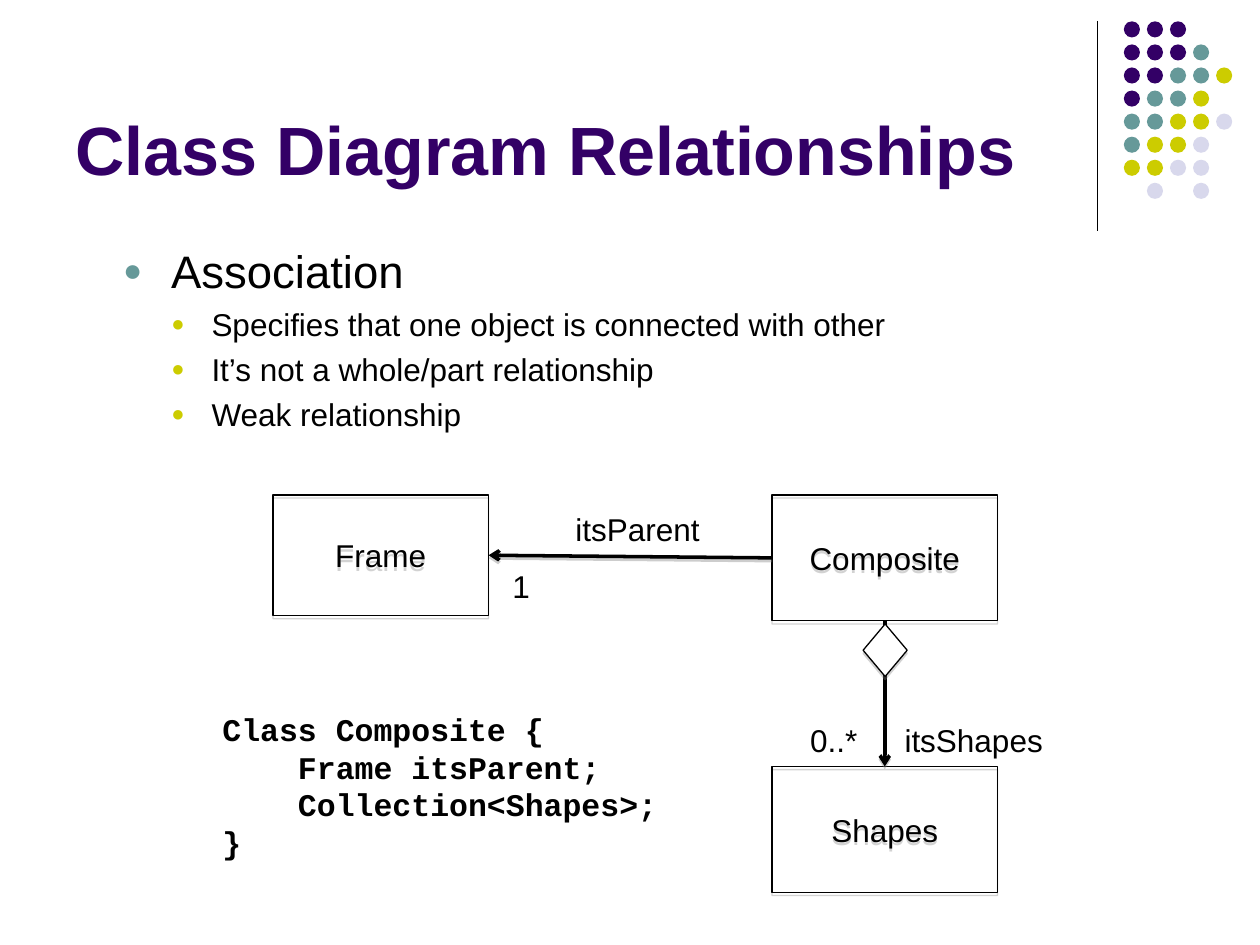
from typing import NamedTuple

from lxml.etree import SubElement
from pptx import Presentation
from pptx.dml.color import RGBColor
from pptx.enum.shapes import MSO_CONNECTOR, MSO_SHAPE
from pptx.enum.text import MSO_ANCHOR, PP_ALIGN
from pptx.oxml.ns import qn
from pptx.util import Pt

BLACK = RGBColor(0x00, 0x00, 0x00)
WHITE = RGBColor(0xFF, 0xFF, 0xFF)
GRAY = RGBColor(0x80, 0x80, 0x80)
PURPLE = RGBColor(0x33, 0x00, 0x66)
TEAL = RGBColor(0x66, 0x99, 0x99)
LIME = RGBColor(0xCC, 0xCC, 0x00)
LAVENDER = RGBColor(0xD8, 0xD8, 0xEC)

DOT_COLORS = {"P": PURPLE, "T": TEAL, "L": LIME, "V": LAVENDER}
DOT_ROWS = ("PPP", "PPPT", "PPTTL", "PTTL", "TTLLV", "TLLV", "LLVV", " V V")
DOT_LEFT, DOT_TOP, DOT_PITCH, DOT_SIZE = 642.2, 12.2, 13.18, 9.2


class Box(NamedTuple):
    left: float
    top: float
    width: float
    height: float

    def lengths(self) -> list:
        return [Pt(value) for value in self]


class ClassBox(NamedTuple):
    name: str
    box: Box


class Label(NamedTuple):
    text: str
    box: Box


class Bullet(NamedTuple):
    text: str
    level: int


class BulletStyle(NamedTuple):
    size: float
    margin: float
    hanging: float
    color: RGBColor


CLASSES = (
    ClassBox("Composite", Box(441.2, 282.8, 128.8, 72)),
    ClassBox("Shapes", Box(441.2, 438, 128.8, 72)),
    ClassBox("Frame", Box(156, 282.8, 123.2, 69)),
)
LABELS = (
    Label("itsShapes", Box(509.8, 408.4, 94.4, 28.8)),
    Label("0..*", Box(455.8, 408.4, 41.8, 28.8)),
    Label("itsParent", Box(321.8, 288, 86, 28.8)),
    Label("1", Box(285.8, 320.6, 24.6, 28.8)),
)
DIAMOND = Box(493.2, 356.6, 25.2, 30)
BULLETS = (
    Bullet("Association", 0),
    Bullet("Specifies that one object is connected with other", 1),
    Bullet("It’s not a whole/part relationship", 1),
    Bullet("Weak relationship", 1),
)
BULLET_STYLES = (BulletStyle(26, 54.7, 27.4, TEAL), BulletStyle(18, 77.8, 23, LIME))
CODE = (
    ("Class Composite {", 0),
    ("Frame itsParent;", 1),
    ("Collection<Shapes>;", 1),
    ("}", 0),
)
CODE_INDENT = 43.2


def write(paragraph, text: str, *, size: float = 18, font: str = "Arial",
          color: RGBColor = BLACK, bold: bool = False, align=PP_ALIGN.LEFT) -> None:
    paragraph.alignment = align
    run = paragraph.add_run()
    run.text = text
    run.font.size = Pt(size)
    run.font.name = font
    run.font.bold = bold
    run.font.color.rgb = color


def add_frame(slide, box: Box, wrap: bool = False, anchor=MSO_ANCHOR.TOP):
    frame = slide.shapes.add_textbox(*box.lengths()).text_frame
    frame.word_wrap = wrap
    frame.vertical_anchor = anchor
    return frame


def next_paragraph(frame, index: int):
    return frame.add_paragraph() if index else frame.paragraphs[0]


def indent(paragraph, margin: float, hanging: float = 0) -> None:
    properties = paragraph._p.get_or_add_pPr()
    properties.set("marL", str(Pt(margin)))
    properties.set("indent", str(-Pt(hanging)))


def add_bullet(paragraph, color: RGBColor) -> None:
    properties = paragraph._p.get_or_add_pPr()
    SubElement(SubElement(properties, qn("a:buClr")), qn("a:srgbClr"), val=str(color))
    SubElement(properties, qn("a:buSzPct"), val="70000")
    SubElement(properties, qn("a:buFont"), typeface="Arial")
    SubElement(properties, qn("a:buChar"), char="●")


def set_effects(drawn, distance: float = 0, opacity: int = 0) -> None:
    """Replace the theme shadow by a downward gray one, or by none."""
    properties = drawn._element.spPr
    effects = SubElement(properties, qn("a:effectLst"))
    if distance:
        shadow = SubElement(effects, qn("a:outerShdw"), blurRad="0",
                            dist=str(Pt(distance)), dir="5400000", rotWithShape="0")
        color = SubElement(shadow, qn("a:srgbClr"), val=str(GRAY))
        SubElement(color, qn("a:alpha"), val=str(opacity * 1000))


def add_outlined(slide, kind, box: Box, fill: RGBColor | None = None):
    shape = slide.shapes.add_shape(kind, *box.lengths())
    if fill is None:
        shape.fill.background()
    else:
        shape.fill.solid()
        shape.fill.fore_color.rgb = fill
    shape.line.color.rgb = BLACK
    shape.line.width = Pt(0.75)
    set_effects(shape, 1.8, 35)
    return shape


def add_line(slide, start: tuple, end: tuple, width: float, arrow: bool = False) -> None:
    points = [Pt(value) for value in (*start, *end)]
    line = slide.shapes.add_connector(MSO_CONNECTOR.STRAIGHT, *points)
    line.line.color.rgb = BLACK
    line.line.width = Pt(width)
    if arrow:
        SubElement(line.line._get_or_add_ln(), qn("a:tailEnd"), type="arrow")
        set_effects(line, 1.6, 38)
    else:
        set_effects(line)


def add_dots(slide) -> None:
    for row, codes in enumerate(DOT_ROWS):
        for column, code in enumerate(codes):
            if code not in DOT_COLORS:
                continue
            box = Box(DOT_LEFT + column * DOT_PITCH, DOT_TOP + row * DOT_PITCH,
                      DOT_SIZE, DOT_SIZE)
            dot = slide.shapes.add_shape(MSO_SHAPE.OVAL, *box.lengths())
            dot.shadow.inherit = False
            dot.fill.solid()
            dot.fill.fore_color.rgb = DOT_COLORS[code]
            dot.line.fill.background()


def add_bullets(slide) -> None:
    frame = add_frame(slide, Box(36, 135.4, 648, 347), wrap=True)
    for index, bullet in enumerate(BULLETS):
        style = BULLET_STYLES[bullet.level]
        paragraph = next_paragraph(frame, index)
        paragraph.level = bullet.level
        paragraph.space_before = Pt(0.23 * style.size)
        indent(paragraph, style.margin, style.hanging)
        add_bullet(paragraph, style.color)
        write(paragraph, bullet.text, size=style.size)


def add_diagram(slide) -> None:
    for item in CLASSES:
        frame = add_outlined(slide, MSO_SHAPE.RECTANGLE, item.box).text_frame
        frame.vertical_anchor = MSO_ANCHOR.MIDDLE
        write(frame.paragraphs[0], item.name, align=PP_ALIGN.CENTER)
    add_line(slide, (505.6, 354.8), (505.6, 438), 2, arrow=True)
    add_line(slide, (441.2, 318.8), (279.2, 317.3), 2, arrow=True)
    add_outlined(slide, MSO_SHAPE.DIAMOND, DIAMOND, WHITE)
    for label in LABELS:
        write(add_frame(slide, label.box).paragraphs[0], label.text)


def add_code(slide) -> None:
    frame = add_frame(slide, Box(120, 402, 265.7, 94.3))
    for index, (text, depth) in enumerate(CODE):
        paragraph = next_paragraph(frame, index)
        indent(paragraph, depth * CODE_INDENT)
        write(paragraph, text, font="Courier New", bold=True)


def main() -> None:
    deck = Presentation()
    deck.slide_width, deck.slide_height = Pt(720), Pt(540)
    slide = deck.slides.add_slide(deck.slide_layouts[6])
    add_line(slide, (627, 12), (627, 132), 0.75)
    add_dots(slide)
    title = add_frame(slide, Box(36, 9.4, 594, 102.2), wrap=True, anchor=MSO_ANCHOR.BOTTOM)
    write(title.paragraphs[0], "Class Diagram Relationships", size=39, color=PURPLE, bold=True)
    add_bullets(slide)
    add_diagram(slide)
    add_code(slide)
    deck.save("out.pptx")


if __name__ == "__main__":
    main()
